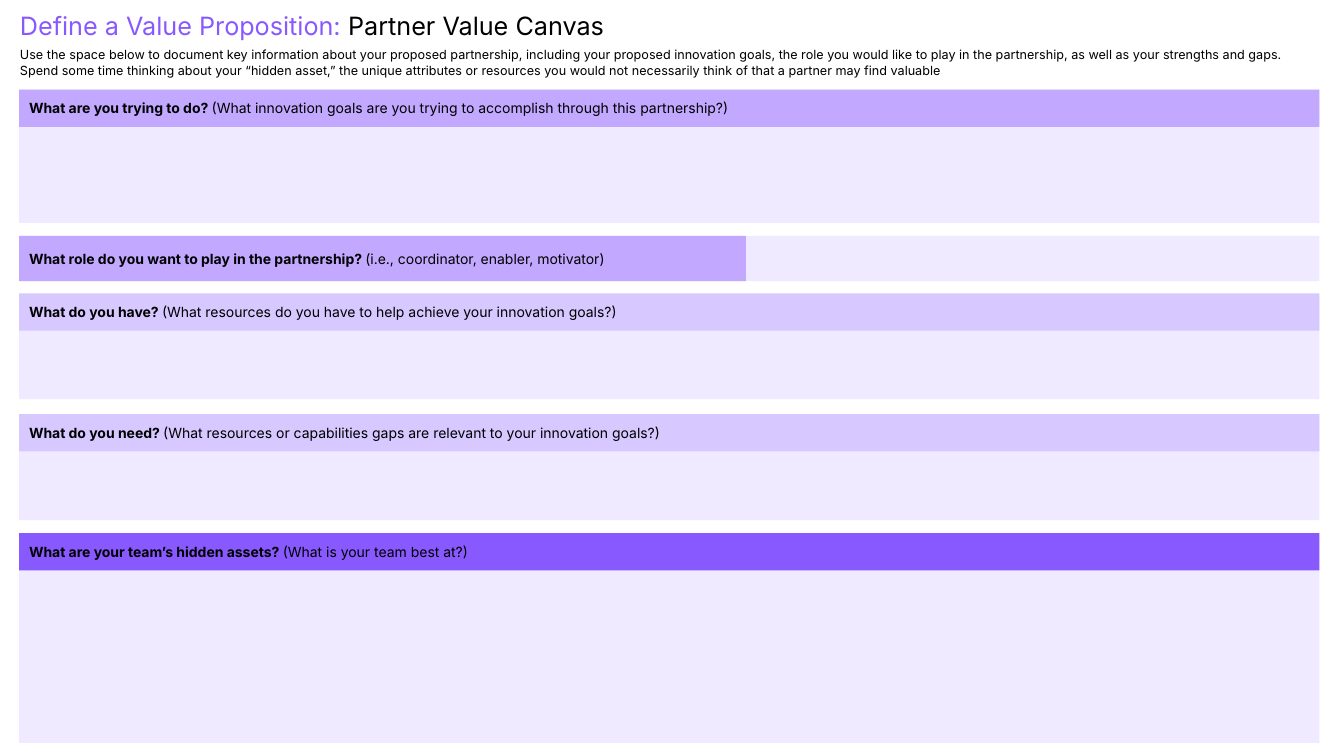
from typing import NamedTuple

from pptx import Presentation
from pptx.dml.color import RGBColor
from pptx.enum.shapes import MSO_SHAPE
from pptx.enum.text import MSO_ANCHOR, PP_ALIGN
from pptx.util import Pt

FONT = "Inter"
BLACK = "000000"
VIOLET = "8859FF"
LILAC = "C2A8FF"
LAVENDER = "D7C8FF"
PALE = "EFEAFF"

LEFT = 13.68
FULL_WIDTH = 928.8
HEADER_HEIGHT = 26.64


class Run(NamedTuple):
    text: str
    color: str = BLACK
    bold: bool = False


class Section(NamedTuple):
    question: str
    hint: str
    color: str
    header_top: float
    panel_top: float
    panel_height: float
    header_width: float = FULL_WIDTH
    header_height: float = HEADER_HEIGHT


SECTIONS = [
    Section("What are you trying to do? ",
            "(What innovation goals are you trying to accomplish through this partnership?)",
            LILAC, 64.08, 64.08, 95.04),
    Section("What role do you want to play in the partnership? ",
            "(i.e., coordinator, enabler, motivator)",
            LILAC, 168.48, 168.48, 32.4, header_width=519.12, header_height=32.4),
    Section("What do you have? ",
            "(What resources do you have to help achieve your innovation goals?)",
            LAVENDER, 209.52, 210.96, 74.16),
    Section("What do you need? ",
            "(What resources or capabilities gaps are relevant to your innovation goals?)",
            LAVENDER, 295.92, 295.92, 75.6),
    Section("What are your team’s hidden assets? ",
            "(What is your team best at?)",
            VIOLET, 380.88, 382.32, 148.32),
]


def rgb(color: str) -> RGBColor:
    return RGBColor.from_string(color)


def write_text(shape, runs: list[Run], *, size: float, anchor=MSO_ANCHOR.TOP) -> None:
    frame = shape.text_frame
    frame.word_wrap = True
    frame.vertical_anchor = anchor
    paragraph = frame.paragraphs[0]
    paragraph.alignment = PP_ALIGN.LEFT
    for part in runs:
        run = paragraph.add_run()
        run.text = part.text
        run.font.name = FONT
        run.font.size = Pt(size)
        run.font.bold = part.bold
        run.font.color.rgb = rgb(part.color)


def add_text_box(slide, runs: list[Run], *, top: float, width: float, size: float) -> None:
    box = slide.shapes.add_textbox(Pt(7.2), Pt(top), Pt(width), Pt(28.8))
    write_text(box, runs, size=size)


def add_bar(slide, top: float, width: float, height: float, color: str):
    shape = slide.shapes.add_shape(
        MSO_SHAPE.RECTANGLE, Pt(LEFT), Pt(top), Pt(width), Pt(height))
    shape.shadow.inherit = False
    shape.fill.solid()
    shape.fill.fore_color.rgb = rgb(color)
    shape.line.fill.background()
    return shape


def add_header(slide, section: Section) -> None:
    header = add_bar(slide, section.header_top, section.header_width,
                     section.header_height, section.color)
    runs = [Run(section.question, bold=True), Run(section.hint)]
    write_text(header, runs, size=10, anchor=MSO_ANCHOR.MIDDLE)


def main() -> None:
    presentation = Presentation()
    presentation.slide_width = Pt(960)
    presentation.slide_height = Pt(540)
    slide = presentation.slides.add_slide(presentation.slide_layouts[6])

    # Title and introduction
    add_text_box(slide, [Run("Define a Value Proposition: ", VIOLET),
                         Run("Partner Value Canvas")], top=3.6, width=943.2, size=18)
    add_text_box(slide, [Run(
        "Use the space below to document key information about your proposed partnership, "
        "including your proposed innovation goals, the role you would like to play in the "
        "partnership, as well as your strengths and gaps. Spend some time thinking about "
        "your “hidden asset,” the unique attributes or resources you would not necessarily "
        "think of that a partner may find valuable")], top=30.24, width=936, size=9)

    # Answer panels
    for section in SECTIONS:
        add_bar(slide, section.panel_top, FULL_WIDTH, section.panel_height, PALE)

    # Question headers
    for section in SECTIONS:
        add_header(slide, section)

    presentation.save("out.pptx")


if __name__ == "__main__":
    main()
